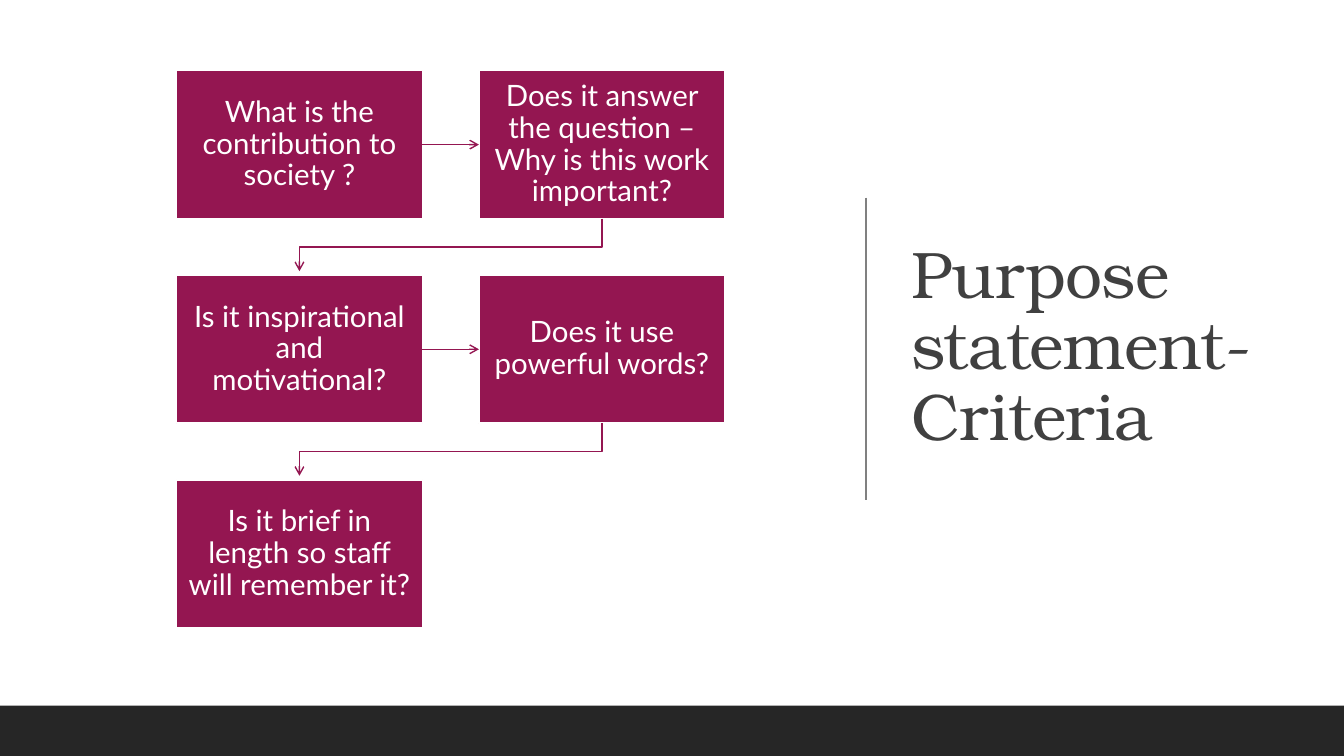
from lxml import etree
from pptx import Presentation, util as u
from pptx.dml.color import RGBColor
from pptx.enum import shapes, text
from pptx.oxml.ns import qn

TITLE = "Purpose statement- Criteria"
CRITERIA = [
    "What is the contribution to society ?",
    "Does it answer the question – Why is this work important?",
    "Is it inspirational and motivational?",
    "Does it use powerful words?",
    "Is it brief in length so staff will remember it?",
]

PLUM = RGBColor(0x94, 0x16, 0x51)
WHITE = RGBColor(0xFF, 0xFF, 0xFF)
INK = RGBColor(0x40, 0x40, 0x40)
GREY = RGBColor(0x80, 0x80, 0x80)
CHARCOAL = RGBColor(0x26, 0x26, 0x26)

SLIDE_W, SLIDE_H = u.Inches(13.33), u.Inches(7.5)
COLUMNS = 2
LEFT, TOP = u.Inches(1.75), u.Inches(0.7)
BOX_W, BOX_H = u.Inches(2.44), u.Inches(1.47)
PITCH_X, PITCH_Y = u.Inches(3), u.Inches(2.03)
ARROW_GAP = u.Inches(0.04)
FOOTER_H = SLIDE_H // 15
RULE_X, RULE_TOP, RULE_BOTTOM = u.Inches(8.59), u.Inches(1.96), u.Inches(4.96)


def write(shape, words, font_name, size, color, align):
    frame = shape.text_frame
    frame.word_wrap = True
    frame.vertical_anchor = text.MSO_ANCHOR.MIDDLE
    paragraph = frame.paragraphs[0]
    paragraph.text = words
    paragraph.alignment = align
    paragraph.line_spacing = 0.9
    paragraph.font.name = font_name
    paragraph.font.size = u.Pt(size)
    paragraph.font.color.rgb = color
    return paragraph


def add_block(slide, left, top, width, height, fill):
    block = slide.shapes.add_shape(shapes.MSO_SHAPE.RECTANGLE, left, top, width, height)
    block.shadow.inherit = False
    block.fill.solid()
    block.fill.fore_color.rgb = fill
    block.line.fill.background()
    return block


def add_criterion(slide, index, words):
    row, column = divmod(index, COLUMNS)
    box = add_block(slide, LEFT + column * PITCH_X, TOP + row * PITCH_Y, BOX_W, BOX_H, PLUM)
    box.line.color.rgb = WHITE
    box.line.width = u.Pt(1.25)
    frame = box.text_frame
    frame.margin_left = frame.margin_right = u.Inches(0.12)
    frame.margin_top = frame.margin_bottom = u.Inches(0.13)
    write(box, words, "Lato", 21, WHITE, text.PP_ALIGN.CENTER)
    return box


def style_line(line, color, arrow=False):
    line.color.rgb = color
    line.width = u.Pt(1)
    if arrow:
        etree.SubElement(line._get_or_add_ln(), qn("a:tailEnd"), type="arrow")


def add_straight(slide, color, start=(0, 0), end=(0, 0), joined=None):
    """Draw a straight line; joined is a pair of boxes linked side to side."""
    link = slide.shapes.add_connector(shapes.MSO_CONNECTOR.STRAIGHT, *start, *end)
    if joined:
        link.begin_connect(joined[0], 3)
        link.end_connect(joined[1], 1)
    style_line(link.line, color, arrow=bool(joined))
    etree.SubElement(link._element.spPr, qn("a:effectLst"))


def add_row_turn(slide, source, target):
    """Lead from the end of one row down to the start of the next."""
    start_x = source.left + source.width // 2
    end_x = target.left + target.width // 2
    start_y = source.top + source.height
    middle_y = (start_y + target.top) // 2
    builder = slide.shapes.build_freeform(start_x, start_y)
    builder.add_line_segments(
        [(start_x, middle_y), (end_x, middle_y), (end_x, target.top - ARROW_GAP)],
        close=False,
    )
    turn = builder.convert_to_shape()
    turn.shadow.inherit = False
    turn.fill.background()
    style_line(turn.line, PLUM, arrow=True)


def main():
    deck = Presentation()
    deck.slide_width, deck.slide_height = SLIDE_W, SLIDE_H
    slide = deck.slides.add_slide(deck.slide_layouts[6])

    title = slide.shapes.add_textbox(
        u.Inches(8.94), u.Inches(0.69), u.Inches(3.69), u.Inches(5.53))
    heading = write(title, TITLE, "TeX Gyre Bonum", 47, INK, text.PP_ALIGN.LEFT)
    heading.runs[0]._r.get_or_add_rPr().set("spc", "-50")

    add_straight(slide, GREY, (RULE_X, RULE_TOP), (RULE_X, RULE_BOTTOM))
    add_block(slide, 0, SLIDE_H - FOOTER_H, SLIDE_W, FOOTER_H, CHARCOAL)

    boxes = [add_criterion(slide, i, words) for i, words in enumerate(CRITERIA)]
    for source, target in zip(boxes, boxes[1:]):
        if source.top == target.top:
            add_straight(slide, PLUM, joined=(source, target))
        else:
            add_row_turn(slide, source, target)

    deck.save("out.pptx")


if __name__ == "__main__":
    main()
